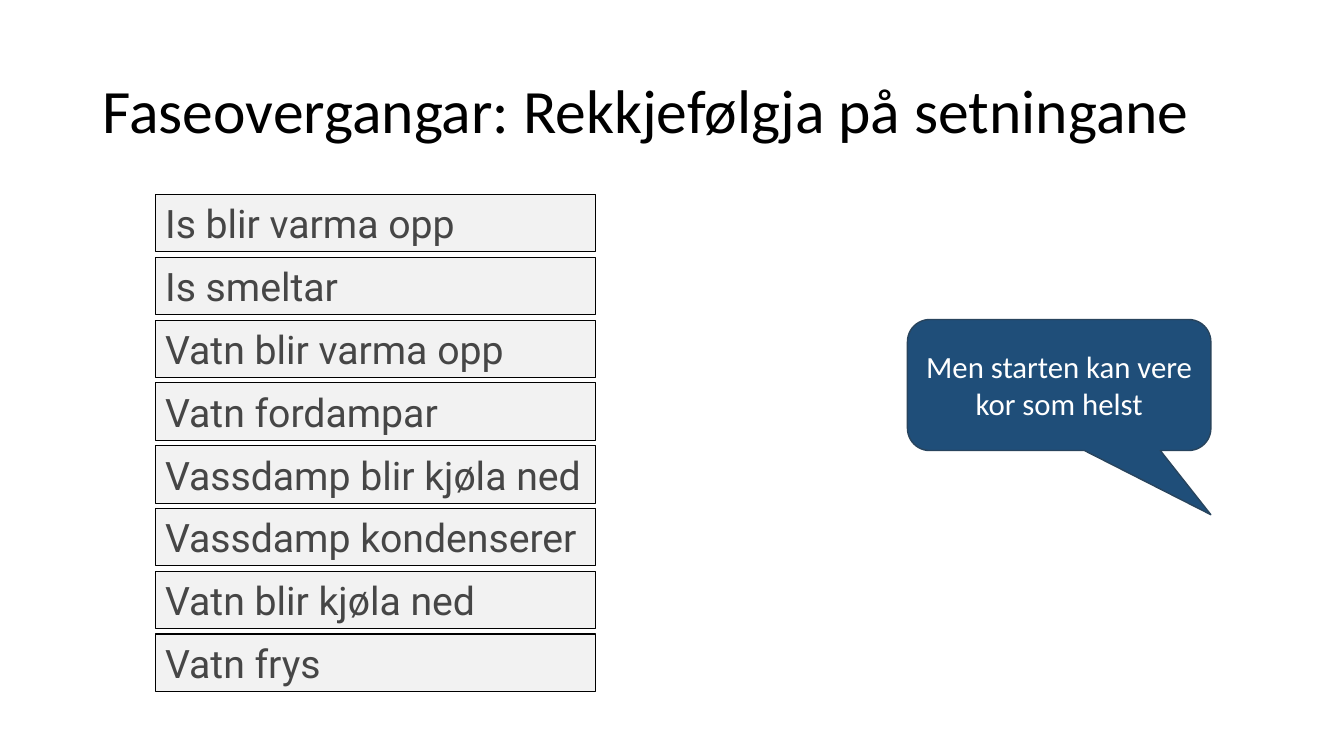
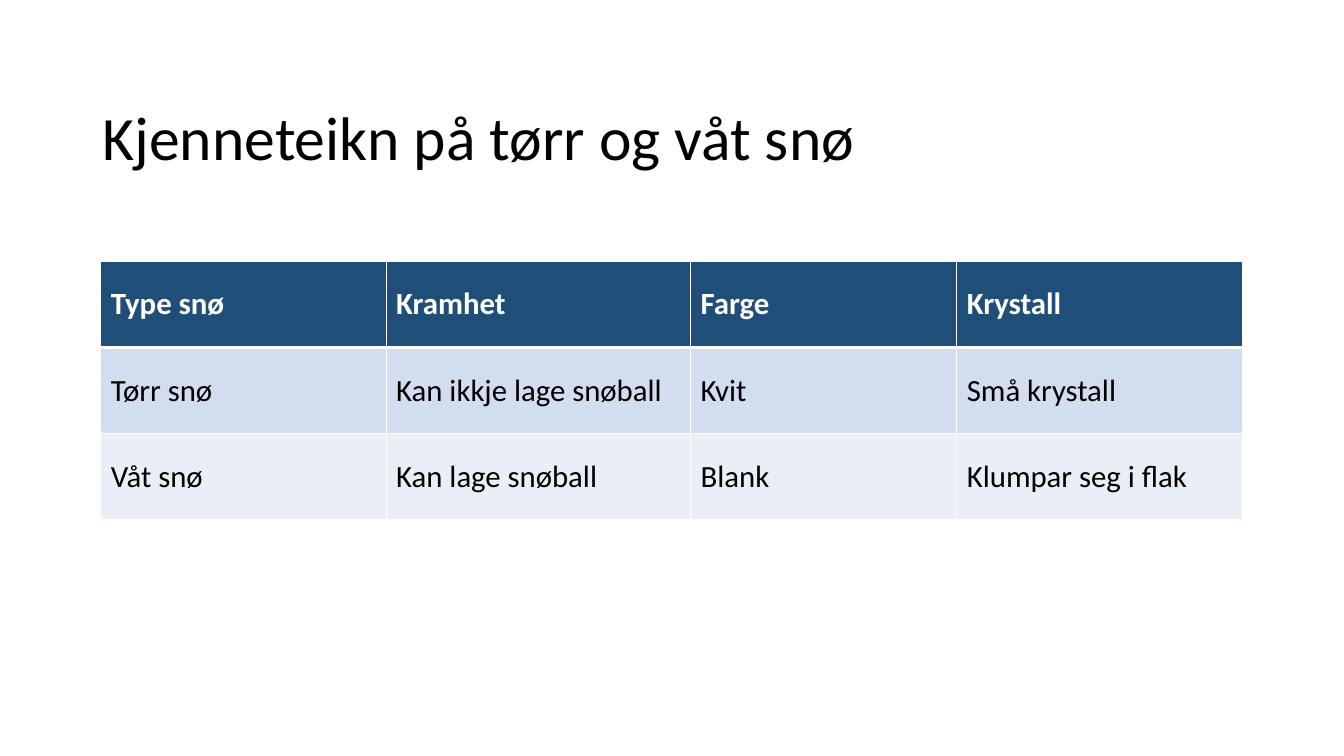
from lxml.etree import SubElement
from pptx import Presentation
from pptx.dml.color import RGBColor
from pptx.enum.shapes import MSO_SHAPE
from pptx.enum.text import MSO_ANCHOR, PP_ALIGN
from pptx.oxml.ns import qn
from pptx.util import Inches, Pt

BLACK = RGBColor(0x00, 0x00, 0x00)
WHITE = RGBColor(0xFF, 0xFF, 0xFF)
DARK_GREY = RGBColor(0x46, 0x46, 0x46)
LIGHT_GREY = RGBColor(0xF2, 0xF2, 0xF2)
NAVY = RGBColor(0x1F, 0x4E, 0x79)
NAVY_EDGE = RGBColor(0x28, 0x44, 0x5D)
ROW_FILLS = (NAVY, RGBColor(0xD2, 0xDE, 0xEF), RGBColor(0xEA, 0xEF, 0xF7))

BODY_FONT = "Calibri"
SENTENCE_FONT = "Roboto"

SENTENCES = (
    "Is blir varma opp",
    "Is smeltar",
    "Vatn blir varma opp",
    "Vatn fordampar",
    "Vassdamp blir kjøla ned",
    "Vassdamp kondenserer",
    "Vatn blir kjøla ned",
    "Vatn frys",
)
SNOW_TYPES = (
    ("Type snø", "Kramhet", "Farge", "Krystall"),
    ("Tørr snø", "Kan ikkje lage snøball", "Kvit", "Små krystall"),
    ("Våt snø", "Kan lage snøball", "Blank", "Klumpar seg i flak"),
)
SNOW_COLUMN_WIDTHS = (2.83, 3.02, 2.64, 2.83)


def write_text(frame, text, *, size=22, font=BODY_FONT, color=BLACK, bold=False,
               align=PP_ALIGN.LEFT, line_spacing=None):
    frame.word_wrap = True
    frame.vertical_anchor = MSO_ANCHOR.MIDDLE
    paragraph = frame.paragraphs[0]
    paragraph.alignment = align
    paragraph.line_spacing = line_spacing
    run = paragraph.add_run()
    run.text = text
    run.font.size = Pt(size)
    run.font.name = font
    run.font.bold = bold
    run.font.color.rgb = color


def add_box(slide, kind, left, top, width, height, fill, line, line_width):
    shape = slide.shapes.add_shape(
        kind, Inches(left), Inches(top), Inches(width), Inches(height))
    shape.shadow.inherit = False
    shape.fill.solid()
    shape.fill.fore_color.rgb = fill
    shape.line.color.rgb = line
    shape.line.width = Pt(line_width)
    return shape


def add_titled_slide(presentation, title, top):
    slide = presentation.slides.add_slide(presentation.slide_layouts[6])
    box = slide.shapes.add_textbox(
        Inches(0.92), Inches(top), Inches(11.5), Inches(1.45))
    write_text(box.text_frame, title, size=44, line_spacing=0.9)
    return slide


def add_sentence_stack(slide, sentences, left, top, width, height, row_height=0.57):
    """Spread the sentence boxes evenly from the top to the bottom of the area."""
    pitch = (height - row_height) / (len(sentences) - 1)
    for index, sentence in enumerate(sentences):
        shape = add_box(slide, MSO_SHAPE.RECTANGLE, left, top + index * pitch,
                        width, row_height, LIGHT_GREY, BLACK, 0.75)
        write_text(shape.text_frame, sentence, size=28, font=SENTENCE_FONT,
                   color=DARK_GREY)


def add_callout(slide, text, left, top, width, height):
    shape = add_box(slide, MSO_SHAPE.ROUNDED_RECTANGULAR_CALLOUT,
                    left, top, width, height, NAVY, NAVY_EDGE, 1)
    for index, value in enumerate((0.5, 0.99, 0.17)):
        shape.adjustments[index] = value
    write_text(shape.text_frame, text, color=WHITE, align=PP_ALIGN.CENTER)


def set_cell_borders(cell, **widths):
    """Draw white borders; widths in points are keyed by L, R, T and B, in that order."""
    properties = cell._tc.get_or_add_tcPr()
    for side, width in widths.items():
        line = SubElement(properties, qn(f"a:ln{side}"), w=str(Pt(width)))
        fill = SubElement(line, qn("a:solidFill"))
        SubElement(fill, qn("a:srgbClr"), val=str(WHITE))


def add_snow_table(slide, rows, column_widths, left, top, height):
    table = slide.shapes.add_table(
        len(rows), len(column_widths), Inches(left), Inches(top),
        Inches(sum(column_widths)), Inches(height)).table
    for column, width in zip(table.columns, column_widths):
        column.width = Inches(width)
    for row_index, (row, fill) in enumerate(zip(rows, ROW_FILLS)):
        is_header = row_index == 0
        for column_index, text in enumerate(row):
            cell = table.cell(row_index, column_index)
            set_cell_borders(cell, L=1, R=1, T=3 if row_index == 1 else 1,
                             B=3 if is_header else 1)
            cell.fill.solid()
            cell.fill.fore_color.rgb = fill
            cell.vertical_anchor = MSO_ANCHOR.MIDDLE
            write_text(cell.text_frame, text, bold=is_header,
                       color=WHITE if is_header else BLACK)


def build_phase_slide(presentation):
    slide = add_titled_slide(
        presentation, "Faseovergangar: Rekkjefølgja på setningane", 0.4)
    add_sentence_stack(slide, SENTENCES, 1.54, 1.93, 4.37, 4.93)
    add_callout(slide, "Men starten kan vere kor som helst", 9, 3.17, 3.01, 1.3)


def build_snow_slide(presentation):
    slide = add_titled_slide(presentation, "Kjenneteikn på tørr og våt snø", 0.67)
    add_snow_table(slide, SNOW_TYPES, SNOW_COLUMN_WIDTHS, 1, 2.59, 2.57)


def main():
    presentation = Presentation()
    presentation.slide_width = Inches(13.33)
    presentation.slide_height = Inches(7.5)
    build_phase_slide(presentation)
    build_snow_slide(presentation)
    presentation.save("out.pptx")


if __name__ == "__main__":
    main()
